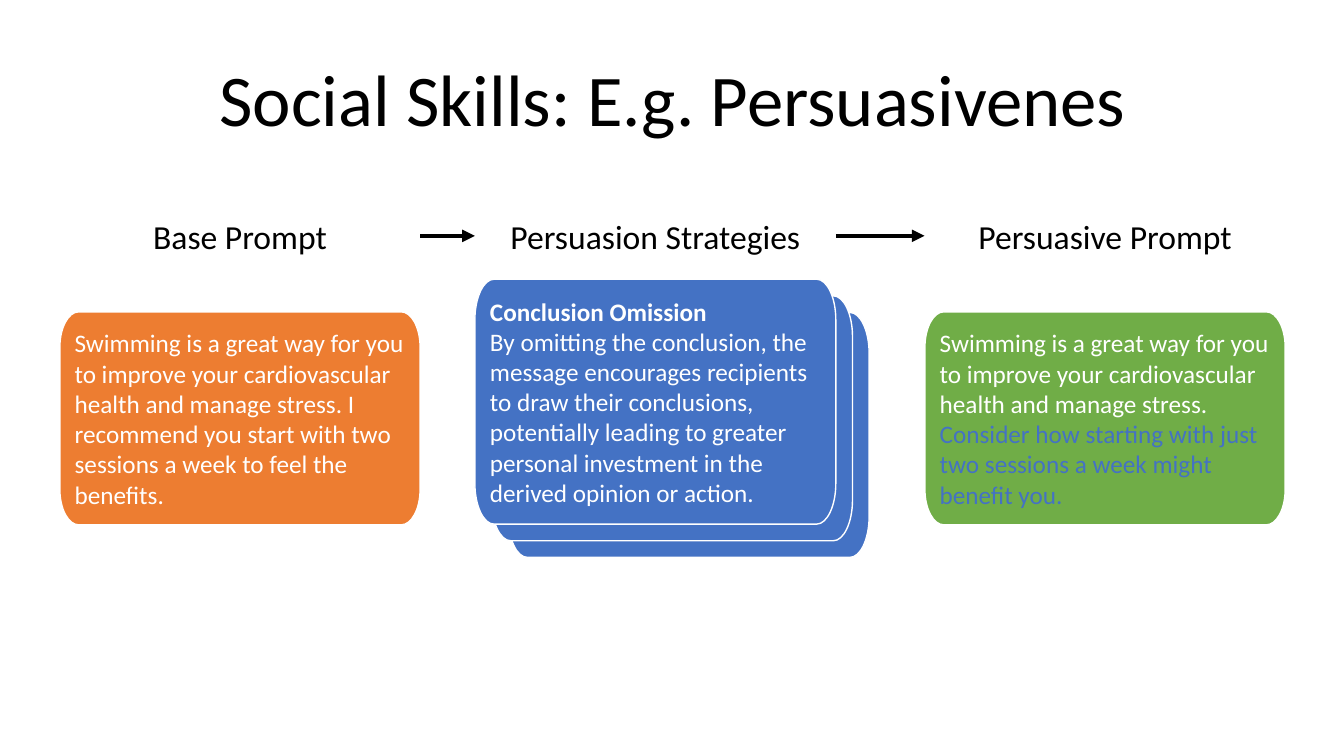
from lxml import etree
from pptx import Presentation
from pptx.dml.color import RGBColor
from pptx.enum.shapes import MSO_CONNECTOR as Connector
from pptx.enum.text import MSO_ANCHOR as Anchor, MSO_AUTO_SIZE as AutoSize, PP_ALIGN as Align
from pptx.oxml.ns import qn
from pptx.util import Inches, Pt

FONT = "Calibri"
WHITE, BLACK = "FFFFFF", "000000"
BLUE, ORANGE, GREEN = "4472C4", "ED7D31", "70AD47"

COLUMN_WIDTH = 3.58
BASE_LEFT, STRATEGY_LEFT, RESULT_LEFT = 0.59, 4.71, 9.17
HEADING_TOP, HEADING_HEIGHT = 2.09, 0.5
PROMPT_TOP, PROMPT_HEIGHT = 3.09, 2.12
STRATEGY_TOP, STRATEGY_HEIGHT = 2.77, 2.43
STACK_SIZE, STACK_SPREAD = 3, 0.33
CORNER_WIDTH, CORNER_PULL = 0.19, 0.55

SHARED_ADVICE = ("Swimming is a great way for you to improve your cardiovascular "
                 "health and manage stress. ")
BASE_ENDING = "I recommend you start with two sessions a week to feel the benefits."
PERSUASIVE_ENDING = "Consider how starting with just two sessions a week might benefit you."
STRATEGY_NAME = "Conclusion Omission"
STRATEGY_DESCRIPTION = (
    "By omitting the conclusion, the message encourages recipients to draw their "
    "conclusions, potentially leading to greater personal investment in the derived "
    "opinion or action.")


def rgb(hex_code):
    return RGBColor.from_string(hex_code)


def set_font(font, size, color):
    font.name, font.size = FONT, Pt(size)
    font.color.rgb = rgb(color)


def card_outline(left, top, width, height):
    """Ends of the four corners, clockwise from the left edge."""
    right, bottom = left + width, top + height
    rx, ry = CORNER_WIDTH, height / 6
    points = [(left, top + ry), (left + rx, top), (right - rx, top), (right, top + ry),
              (right, bottom - ry), (right - rx, bottom), (left + rx, bottom),
              (left, bottom - ry)]
    return [(Inches(x), Inches(y)) for x, y in points]


def round_corners(card):
    """Turn every other segment of the outline, the corners, into a curve."""
    outline = card.element.find(".//" + qn("a:path"))
    points = [(int(pt.get("x")), int(pt.get("y"))) for pt in outline.iter(qn("a:pt"))]
    segments = outline.findall(qn("a:lnTo"))
    for index in range(0, len(points), 2):
        start, end = points[index:index + 2]
        # Corners alternate between leaving a vertical and a horizontal edge.
        tip = (start[0], end[1]) if index % 4 == 0 else (end[0], start[1])
        controls = [[round(a + CORNER_PULL * (b - a)) for a, b in zip(anchor, tip)]
                    for anchor in (start, end)]
        curve = etree.Element(qn("a:cubicBezTo"))
        for x, y in [*controls, end]:
            etree.SubElement(curve, qn("a:pt"), x=str(x), y=str(y))
        outline.replace(segments[index], curve)


def add_card(slide, left, top, height, fill, line_width):
    start, *others = card_outline(left, top, COLUMN_WIDTH, height)
    builder = slide.shapes.build_freeform(*start)
    builder.add_line_segments(others, close=False)
    card = builder.convert_to_shape()
    round_corners(card)
    etree.SubElement(card.element.find(".//" + qn("a:path")), qn("a:close"))
    card.shadow.inherit = False
    card.fill.solid()
    card.fill.fore_color.rgb = rgb(fill)
    card.line.color.rgb = rgb(WHITE)
    card.line.width = Pt(line_width)
    return card


def start_card_text(card):
    """Prepare the card's text frame and return its paragraph."""
    frame = card.text_frame
    frame.word_wrap = True
    frame.auto_size = AutoSize.SHAPE_TO_FIT_TEXT
    frame.vertical_anchor = Anchor.MIDDLE
    frame.margin_left = frame.margin_right = Inches(0.15)
    frame.margin_top = frame.margin_bottom = Inches(0.15)
    paragraph = frame.paragraphs[0]
    paragraph.alignment = Align.LEFT
    set_font(paragraph.font, 18, WHITE)
    return paragraph


def add_run(paragraph, text):
    run = paragraph.add_run()
    run.text = text
    return run


def add_base_prompt(slide):
    card = add_card(slide, BASE_LEFT, PROMPT_TOP, PROMPT_HEIGHT, ORANGE, 1.5)
    add_run(start_card_text(card), SHARED_ADVICE + BASE_ENDING)


def add_persuasive_prompt(slide):
    card = add_card(slide, RESULT_LEFT, PROMPT_TOP, PROMPT_HEIGHT, GREEN, 1.5)
    paragraph = start_card_text(card)
    add_run(paragraph, SHARED_ADVICE)
    add_run(paragraph, PERSUASIVE_ENDING).font.color.rgb = rgb(BLUE)


def add_strategy_stack(slide, left, top, height):
    for depth in reversed(range(STACK_SIZE)):
        offset = depth * STACK_SPREAD / (STACK_SIZE - 1)
        card = add_card(slide, left + offset, top + offset, height, BLUE, 1)
    paragraph = start_card_text(card)
    add_run(paragraph, STRATEGY_NAME).font.bold = True
    paragraph.add_line_break()
    add_run(paragraph, STRATEGY_DESCRIPTION)


def add_heading(slide, left, text):
    heading = slide.shapes.add_textbox(Inches(left), Inches(HEADING_TOP),
                                       Inches(COLUMN_WIDTH), Inches(HEADING_HEIGHT))
    heading.text_frame.word_wrap = True
    heading.text_frame.auto_size = AutoSize.SHAPE_TO_FIT_TEXT
    paragraph = heading.text_frame.paragraphs[0]
    paragraph.text = text
    paragraph.alignment = Align.CENTER
    set_font(paragraph.font, 24, BLACK)


def add_arrow(slide, start, end):
    y = Inches(HEADING_TOP + HEADING_HEIGHT / 2)
    arrow = slide.shapes.add_connector(Connector.STRAIGHT, Inches(start), y, Inches(end), y)
    arrow.line.color.rgb = rgb(BLACK)
    arrow.line.width = Pt(3)
    properties = arrow.element.spPr
    etree.SubElement(properties.find(qn("a:ln")), qn("a:tailEnd"), type="triangle")
    etree.SubElement(properties, qn("a:effectLst"))


def set_title(slide, text):
    title = slide.shapes.title
    title.left, title.top = Inches(0.92), Inches(0.2)
    title.width, title.height = Inches(11.5), Inches(1.65)
    title.text_frame.vertical_anchor = Anchor.MIDDLE
    paragraph = title.text_frame.paragraphs[0]
    paragraph.text = text
    paragraph.alignment = Align.CENTER
    paragraph.line_spacing = 0.9
    set_font(paragraph.font, 52, BLACK)


def main():
    deck = Presentation()
    deck.slide_width, deck.slide_height = Inches(13.33), Inches(7.5)
    slide = deck.slides.add_slide(deck.slide_layouts[5])

    set_title(slide, "Social Skills: E.g. Persuasivenes")
    add_strategy_stack(slide, STRATEGY_LEFT, STRATEGY_TOP, STRATEGY_HEIGHT)
    add_base_prompt(slide)
    add_persuasive_prompt(slide)

    columns = [(BASE_LEFT, "Base Prompt"), (STRATEGY_LEFT, "Persuasion Strategies"),
               (RESULT_LEFT, "Persuasive Prompt")]
    for left, text in columns:
        add_heading(slide, left, text)
    for (left, _), (next_left, _) in zip(columns, columns[1:]):
        add_arrow(slide, left + COLUMN_WIDTH, next_left)

    deck.save("out.pptx")


if __name__ == "__main__":
    main()
